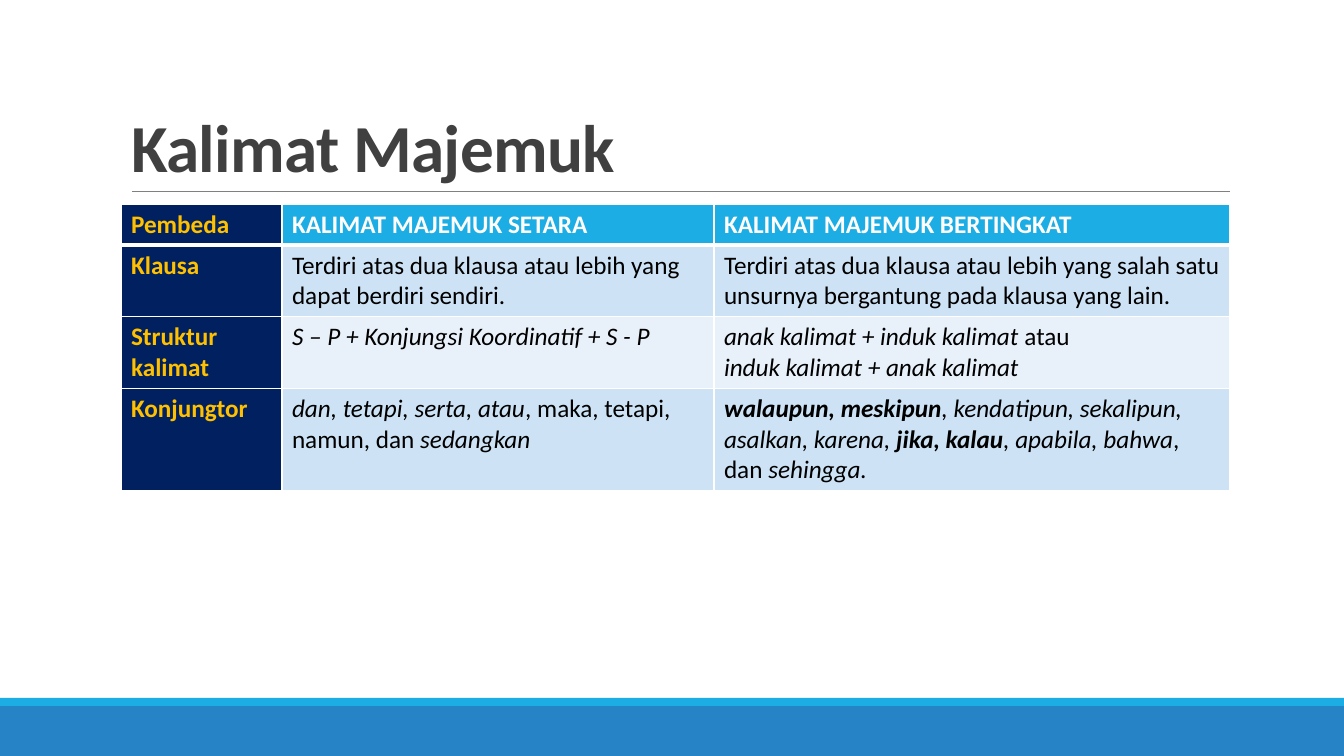
from dataclasses import dataclass
from lxml.etree import SubElement as Sub
from pptx import Presentation
from pptx.dml.color import RGBColor as Rgb
from pptx.enum.shapes import MSO_CONNECTOR as Link, MSO_SHAPE as Form
from pptx.enum.text import MSO_ANCHOR as Anchor, MSO_AUTO_SIZE as Auto, PP_ALIGN as Align
from pptx.oxml.ns import qn
from pptx.util import Pt


@dataclass(frozen=True)
class Theme:
    face: str = "Calibri"
    head: int = 48
    body: int = 18
    title: str = "404040"
    rule: str = "808080"
    blue: str = "2683C6"
    cyan: str = "1CADE4"
    navy: str = "002060"
    gold: str = "FFC000"
    white: str = "FFFFFF"
    black: str = "000000"
    bands: tuple = ("CDE3F5", "E8F1FA")


def px(num):
    return round(num * 914400 / 100.8)


def paint(fill, color):
    fill.solid()
    fill.fore_color.rgb = Rgb.from_string(color)


class Deck:
    def __init__(self, theme):
        self.theme = theme
        self.show = Presentation()
        self.show.slide_width, self.show.slide_height = px(1344), px(756)
        self.slide = self.show.slides.add_slide(self.show.slide_layouts[5])

    def style(self, para, size, color, bold=None):
        font = para.font
        font.name, font.size, font.bold = self.theme.face, Pt(size), bold
        font.color.rgb = Rgb.from_string(color)

    def title(self, text, *box):
        shape = self.slide.shapes.title
        shape.left, shape.top, shape.width, shape.height = map(px, box)
        frame = shape.text_frame
        frame.text = text
        frame.word_wrap, frame.auto_size = True, Auto.NONE
        frame.vertical_anchor = Anchor.BOTTOM
        para = frame.paragraphs[0]
        para.alignment, para.line_spacing = Align.LEFT, 0.85
        self.style(para, self.theme.head, self.theme.title, True)
        para._p.pPr.find(qn("a:defRPr")).set("spc", "-50")

    def bar(self, color, *box):
        shape = self.slide.shapes.add_shape(Form.RECTANGLE, *map(px, box))
        shape.shadow.inherit = False
        paint(shape.fill, color)
        shape.line.fill.background()

    def rule(self, color, *ends):
        line = self.slide.shapes.add_connector(Link.STRAIGHT, *map(px, ends))
        line.line.color.rgb = Rgb.from_string(color)
        line.line.width = Pt(0.5)
        Sub(line._element.spPr, qn("a:effectLst"))

    def edges(self, cell, top, base):
        props = cell._tc.get_or_add_tcPr()
        for side, width in zip("LRTB", (1, 1, top, base)):
            line = Sub(props, qn(f"a:ln{side}"), w=str(Pt(width)))
            Sub(Sub(line, qn("a:solidFill")), qn("a:srgbClr"), val=self.theme.white)

    def label(self, cell, lines, color, bold):
        frame = cell.text_frame
        for num, runs in enumerate(lines):
            para = frame.add_paragraph() if num else frame.paragraphs[0]
            self.style(para, self.theme.body, color, bold)
            for text, marks in runs:
                run = para.add_run()
                run.text = text
                if "b" in marks:
                    run.font.bold = True
                if "i" in marks:
                    run.font.italic = True

    def table(self, rows, left, top, wide, tall):
        look = self.theme
        grid = self.slide.shapes.add_table(
            len(rows), len(wide), px(left), px(top), px(sum(wide)), px(sum(tall))
        ).table
        grid.first_row = grid.horz_banding = False
        for col, width in zip(grid.columns, wide):
            col.width = px(width)
        for y, (row, height) in enumerate(zip(rows, tall)):
            grid.rows[y].height = px(height)
            for x, item in enumerate(row):
                cell = grid.cell(y, x)
                lines = [[(item, "")]] if isinstance(item, str) else item
                if x == 0:
                    fill, ink = look.navy, look.gold
                elif y == 0:
                    fill, ink = look.cyan, look.white
                else:
                    fill, ink = look.bands[(y - 1) % 2], look.black
                self.edges(cell, 3 if y == 1 else 1, 3 if y == 0 else 1)
                paint(cell.fill, fill)
                self.label(cell, lines, ink, x == 0 or y == 0)


ROWS = [
    ["Pembeda", "KALIMAT MAJEMUK SETARA", "KALIMAT MAJEMUK BERTINGKAT"],
    [
        "Klausa",
        "Terdiri atas dua klausa atau lebih yang dapat berdiri sendiri.",
        "Terdiri atas dua klausa atau lebih yang salah satu unsurnya "
        "bergantung pada klausa yang lain.",
    ],
    [
        "Struktur kalimat",
        [[("S – P + Konjungsi Koordinatif + S - P", "i")]],
        [
            [("anak kalimat + induk kalimat ", "i"), ("atau", "")],
            [("induk kalimat + anak kalimat", "i")],
        ],
    ],
    [
        "Konjungtor",
        [[
            ("dan, tetapi, serta, atau", "i"),
            (", maka, tetapi, namun, dan ", ""),
            ("sedangkan", "i"),
        ]],
        [[
            ("walaupun, meskipun", "bi"),
            (", kendatipun, sekalipun, asalkan, karena, ", "i"),
            ("jika, kalau", "bi"),
            (", apabila, bahwa", "i"),
            (", dan ", ""),
            ("sehingga.", "i"),
        ]],
    ],
]


def main():
    look = Theme()
    deck = Deck(look)
    deck.bar(look.blue, 0, 706, 1344, 50)
    deck.bar(look.cyan, 0, 698, 1344, 8)
    deck.rule(look.rule, 132, 191, 1230, 191)
    deck.title("Kalimat Majemuk", 121, 31, 1109, 160)
    deck.table(ROWS, 121, 204, (161, 432, 516), (41, 71, 71, 102))
    deck.show.save("out.pptx")


if __name__ == "__main__":
    main()
